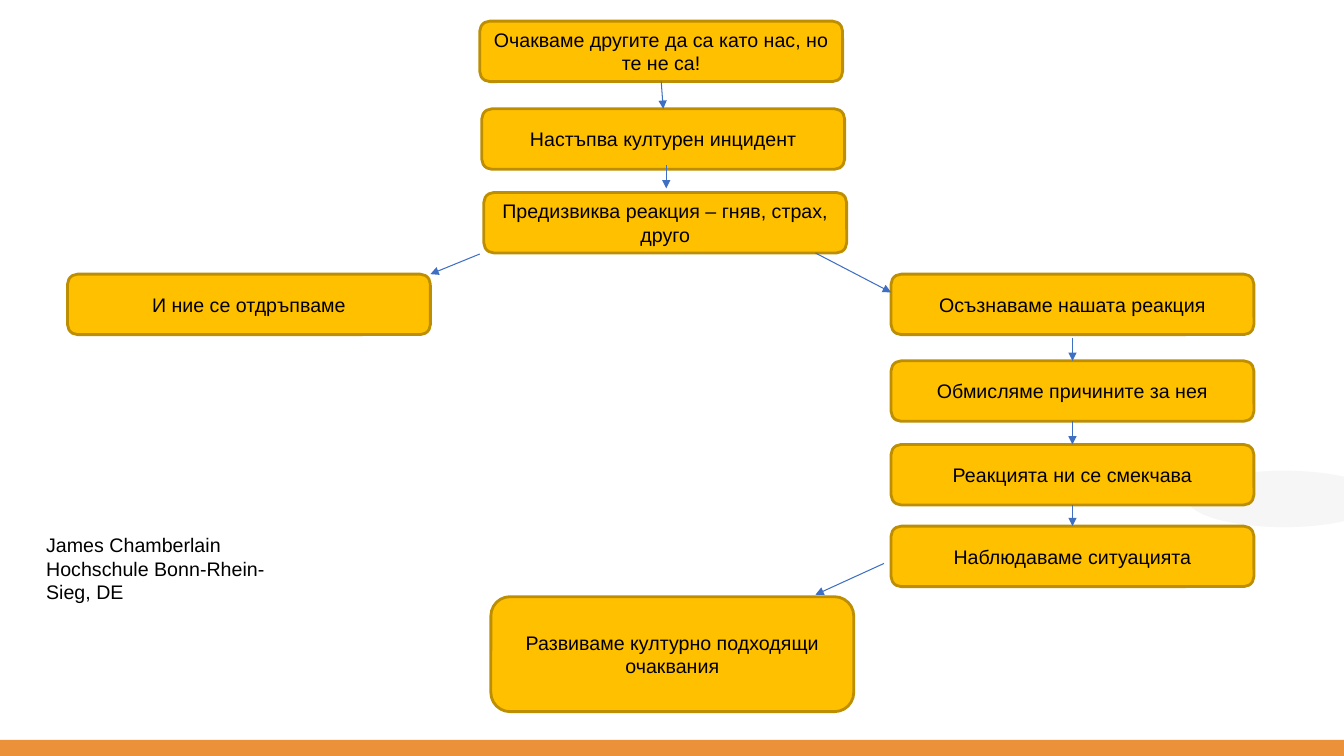
from typing import NamedTuple, Optional

from lxml.etree import SubElement
from pptx import Presentation
from pptx.dml.color import RGBColor
from pptx.enum.shapes import MSO_CONNECTOR, MSO_SHAPE
from pptx.enum.text import MSO_ANCHOR, MSO_AUTO_SIZE, PP_ALIGN
from pptx.oxml.ns import qn
from pptx.util import Pt

COLORS = {
    "box": "FFC000",
    "border": "BD8E00",
    "arrow": "3F6FC3",
    "text": "000000",
    "ellipse": "F5F5F5",
    "footer": "EA9139",
}
BOX_WIDTH, BOX_HEIGHT = 259.2, 43.2
RIGHT_COLUMN = 636.48
RIGHT_MIDDLE = RIGHT_COLUMN + BOX_WIDTH / 2
TOP, BOTTOM = 0, 2


class Step(NamedTuple):
    name: str
    left: float
    top: float
    text: str
    height: float = BOX_HEIGHT


class Arrow(NamedTuple):
    start: tuple[float, float]
    end: tuple[float, float]
    source: Optional[str] = None  # step joined at its bottom side
    target: Optional[str] = None  # step joined at its top side


STEPS = [
    Step("expect", 342.72, 15.12, "Очакваме другите да са като нас, но те не са!"),
    Step("incident", 344.16, 77.76, "Настъпва културен инцидент"),
    Step("develop", 350.64, 426.24, "Развиваме културно подходящи очаквания", 82.08),
    Step("reaction", 345.6, 137.52, "Предизвиква реакция – гняв, страх, друго"),
    Step("soften", RIGHT_COLUMN, 317.52, "Реакцията ни се смекчава"),
    Step("reflect", RIGHT_COLUMN, 257.76, "Обмисляме причините за нея"),
    Step("realise", RIGHT_COLUMN, 195.84, "Осъзнаваме нашата реакция"),
    Step("observe", RIGHT_COLUMN, 375.84, "Наблюдаваме ситуацията"),
    Step("withdraw", 48.24, 195.84, "И ние се отдръпваме"),
]
ARROWS = [
    Arrow((472.32, 58.32), (473.76, 77.76), "expect", "incident"),
    Arrow((582.48, 180.72), (636.48, 208.8)),
    Arrow((475.92, 118.08), (475.92, 134.64)),
    Arrow((RIGHT_MIDDLE, 241.2), (RIGHT_MIDDLE, 257.76), None, "reflect"),
    Arrow((RIGHT_MIDDLE, 360.72), (RIGHT_MIDDLE, 375.84), "soften", "observe"),
    Arrow((RIGHT_MIDDLE, 300.96), (RIGHT_MIDDLE, 317.52), "reflect", "soften"),
    Arrow((342.72, 181.44), (307.44, 195.84)),
    Arrow((631.44, 402.48), (582.48, 424.8)),
]


def color(name: str) -> RGBColor:
    return RGBColor.from_string(COLORS[name])


def add_filled(page, kind, left: float, top: float, width: float, height: float, fill: str):
    shape = page.shapes.add_shape(kind, Pt(left), Pt(top), Pt(width), Pt(height))
    shape.shadow.inherit = False
    shape.fill.solid()
    shape.fill.fore_color.rgb = color(fill)
    shape.line.fill.background()
    return shape


def style_text(para) -> None:
    para.font.size = Pt(14)
    para.font.name = "Arial"
    para.font.color.rgb = color("text")


def add_step(page, step: Step):
    box = add_filled(page, MSO_SHAPE.ROUNDED_RECTANGLE, step.left, step.top,
                     BOX_WIDTH, step.height, "box")
    box.line.color.rgb = color("border")
    box.line.width = Pt(2)
    frame = box.text_frame
    frame.word_wrap = True
    frame.vertical_anchor = MSO_ANCHOR.MIDDLE
    para = frame.paragraphs[0]
    para.text = step.text
    para.alignment = PP_ALIGN.CENTER
    style_text(para)
    return box


def add_arrow(page, arrow: Arrow, boxes: dict) -> None:
    ends = [Pt(value) for value in arrow.start + arrow.end]
    line = page.shapes.add_connector(MSO_CONNECTOR.STRAIGHT, *ends)
    if arrow.source:
        line.begin_connect(boxes[arrow.source], BOTTOM)
    if arrow.target:
        line.end_connect(boxes[arrow.target], TOP)
    line.line.color.rgb = color("arrow")
    line.line.width = Pt(0.75)
    SubElement(line.line._get_or_add_ln(), qn("a:tailEnd"), type="triangle")
    SubElement(line._element.spPr, qn("a:effectLst"))


def add_credit(page, lines: list[str]) -> None:
    box = page.shapes.add_textbox(Pt(25.92), Pt(377.28), Pt(177.84), Pt(58.32))
    frame = box.text_frame
    frame.word_wrap = True
    frame.auto_size = MSO_AUTO_SIZE.SHAPE_TO_FIT_TEXT
    frame.text = "\n".join(lines)
    for para in frame.paragraphs:
        style_text(para)


def main() -> None:
    deck = Presentation()
    deck.slide_width, deck.slide_height = Pt(960), Pt(540)
    page = deck.slides.add_slide(deck.slide_layouts[6])

    # Background decoration
    ellipse = add_filled(page, MSO_SHAPE.OVAL, 848.16, 336.24, 138.24, 40.32, "ellipse")
    tint = ellipse._element.spPr.find(".//" + qn("a:srgbClr"))
    SubElement(tint, qn("a:alpha"), val="89000")
    add_filled(page, MSO_SHAPE.RECTANGLE, 0, 528.48, 960, 11.52, "footer")

    # Flow chart
    boxes = {step.name: add_step(page, step) for step in STEPS}
    for arrow in ARROWS:
        add_arrow(page, arrow, boxes)

    # Author
    add_credit(page, ["James Chamberlain", "Hochschule Bonn-Rhein-Sieg, DE"])

    deck.save("out.pptx")


if __name__ == "__main__":
    main()
